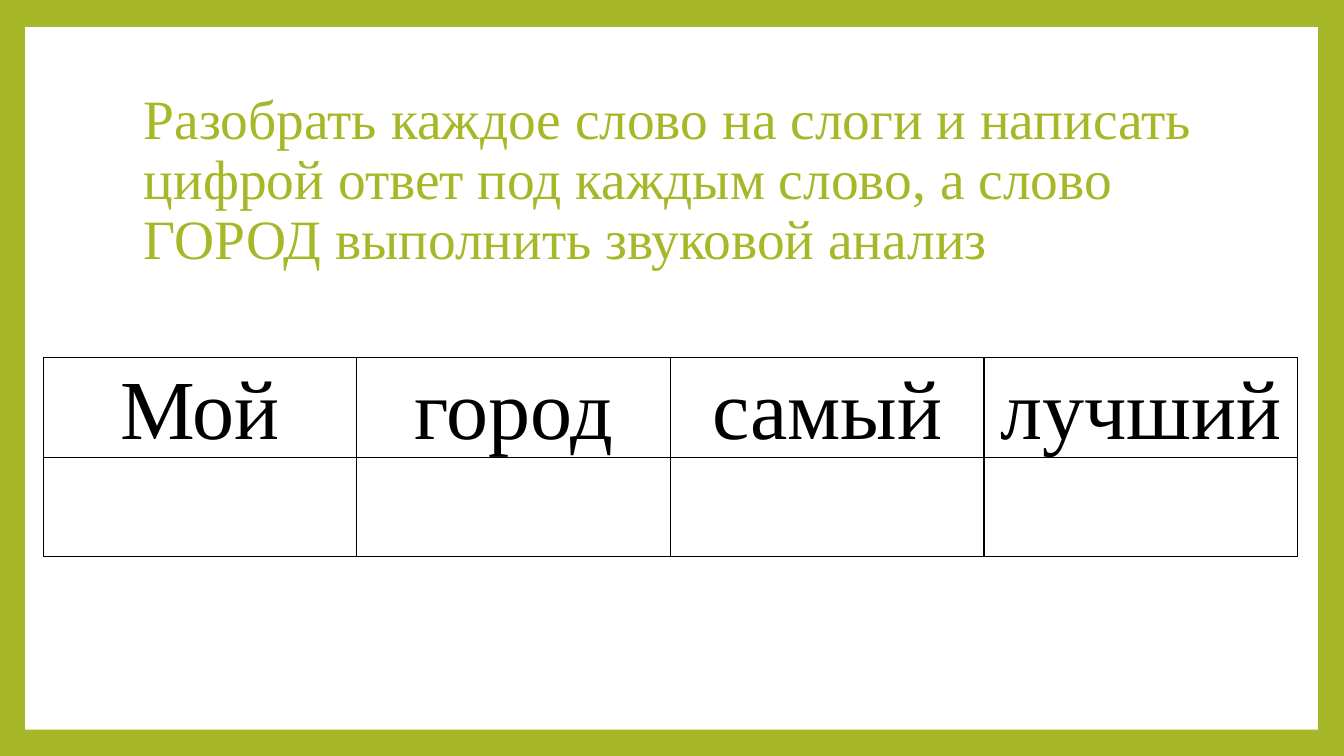
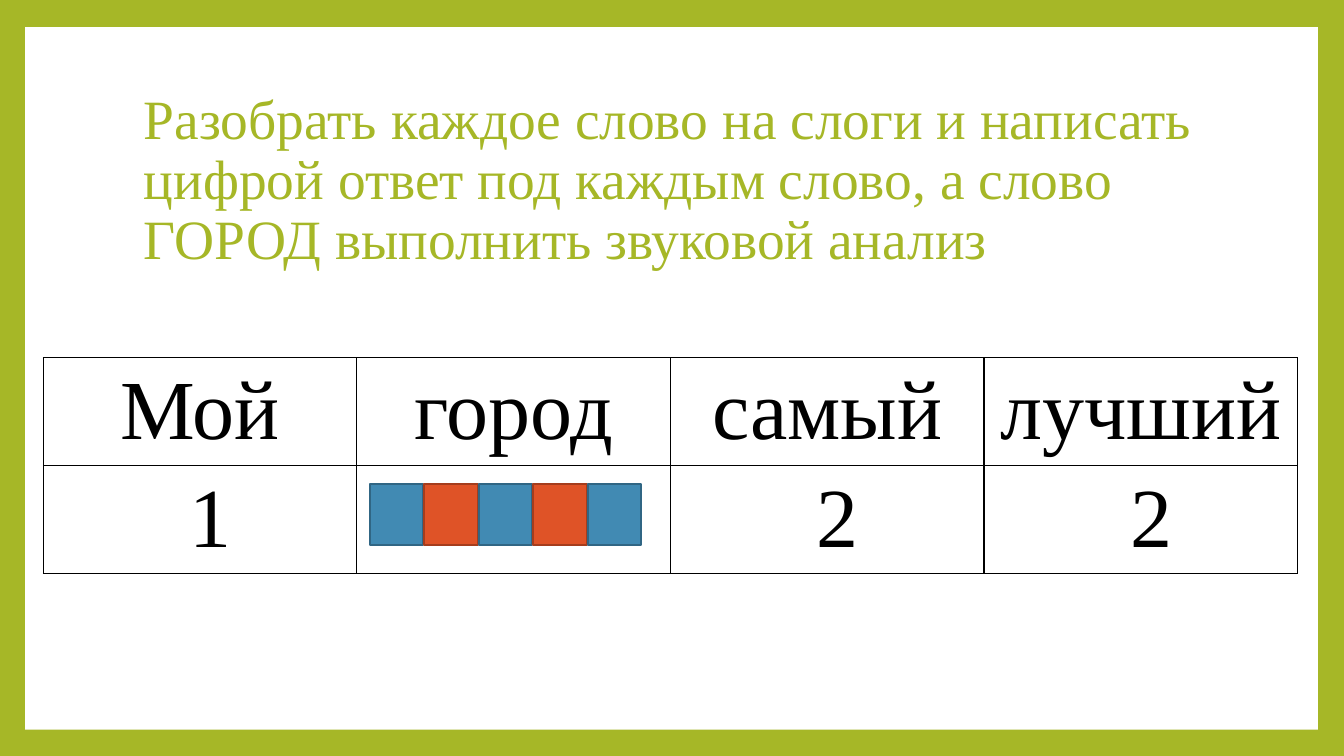
from dataclasses import dataclass

from lxml.etree import SubElement
from pptx import Presentation
from pptx.dml.color import RGBColor
from pptx.enum.shapes import MSO_SHAPE
from pptx.enum.text import MSO_ANCHOR, PP_ALIGN
from pptx.oxml.ns import qn
from pptx.slide import Slide
from pptx.table import _Cell
from pptx.text.text import _Paragraph
from pptx.util import Inches, Pt

FONT = "Times New Roman"
GREEN, WHITE, BLACK = "A6B727", "FFFFFF", "000000"
TITLE = (
    "Разобрать каждое слово на слоги и написать цифрой ответ "
    "под каждым слово, а слово ГОРОД выполнить звуковой анализ"
)
WORDS = ("Мой", "город", "самый", "лучший")
COLUMN_WIDTH, ROW_HEIGHT = 3.11, 0.98
CELL_MARGIN, ANSWER_INDENT = 0.07, 0.28
SOUND_LEFT, SOUND_TOP, SOUND_STEP = 3.67, 4.8, 0.54


@dataclass(frozen=True)
class Sound:
    fill: str
    line: str


CONSONANT = Sound("418AB3", "306684")
VOWEL = Sound("DF5327", "A53D1D")


@dataclass(frozen=True)
class Exercise:
    answers: tuple[str, ...]
    sounds: tuple[Sound, ...] = ()


EXERCISES = (
    Exercise(("", "", "", "")),
    Exercise(("1", "", "2", "2"), (CONSONANT, VOWEL, CONSONANT, VOWEL, CONSONANT)),
)


def color(value: str) -> RGBColor:
    return RGBColor.from_string(value)


def add_run(para: _Paragraph, text: str, size: float, ink: str) -> None:
    span = para.add_run()
    span.text = text
    span.font.name = FONT
    span.font.size = Pt(size)
    span.font.color.rgb = color(ink)


def add_rectangle(page: Slide, left: float, top: float, width: float, height: float,
                  fill: str, line: str | None = None) -> None:
    box = page.shapes.add_shape(
        MSO_SHAPE.RECTANGLE, Inches(left), Inches(top), Inches(width), Inches(height)
    )
    box.shadow.inherit = False
    box.fill.solid()
    box.fill.fore_color.rgb = color(fill)
    if line is None:
        box.line.fill.background()
    else:
        box.line.color.rgb = color(line)
        box.line.width = Pt(1.5)


def add_title(page: Slide) -> None:
    box = page.shapes.add_textbox(Inches(1.33), Inches(1.06), Inches(10.8), Inches(1.48))
    frame = box.text_frame
    frame.word_wrap = True
    frame.vertical_anchor = MSO_ANCHOR.MIDDLE
    para = frame.paragraphs[0]
    para.line_spacing = 0.9
    add_run(para, TITLE, 39.6, GREEN)


def outline_cell(cell: _Cell) -> None:
    cell.fill.background()
    properties = cell._tc.get_or_add_tcPr()
    for index, side in enumerate(("a:lnL", "a:lnR", "a:lnT", "a:lnB")):
        border = SubElement(properties, qn(side), w=str(Pt(1)))
        fill = SubElement(border, qn("a:solidFill"))
        SubElement(fill, qn("a:srgbClr"), val=BLACK)
        properties.insert(index, border)  # borders precede the fill


def add_word_table(page: Slide, answers: tuple[str, ...]) -> None:
    rows = (WORDS, answers)
    table = page.shapes.add_table(
        len(rows), len(WORDS), Inches(0.43), Inches(3.55),
        Inches(COLUMN_WIDTH * len(WORDS)), Inches(ROW_HEIGHT * len(rows)),
    ).table
    table.first_row = table.horz_banding = False
    for column in table.columns:
        column.width = Inches(COLUMN_WIDTH)
    for row_index, texts in enumerate(rows):
        table.rows[row_index].height = Inches(ROW_HEIGHT)
        for column_index, text in enumerate(texts):
            cell = table.cell(row_index, column_index)
            cell.margin_left = Inches(ANSWER_INDENT if row_index else CELL_MARGIN)
            cell.margin_right = Inches(CELL_MARGIN)
            cell.margin_top = cell.margin_bottom = 0
            outline_cell(cell)
            if text:
                para = cell.text_frame.paragraphs[0]
                para.alignment = PP_ALIGN.CENTER
                para.line_spacing = 1.07
                add_run(para, text, 60, BLACK)


def add_exercise(page: Slide, exercise: Exercise) -> None:
    add_rectangle(page, 0.25, 0.27, 12.82, 6.97, WHITE)
    add_word_table(page, exercise.answers)
    add_title(page)
    for index, sound in enumerate(exercise.sounds):
        left = SOUND_LEFT + index * SOUND_STEP
        add_rectangle(page, left, SOUND_TOP, 0.53, 0.61, sound.fill, sound.line)


def main() -> None:
    deck = Presentation()
    deck.slide_width, deck.slide_height = Inches(13.33), Inches(7.5)
    backdrop = deck.slide_master.background.fill
    backdrop.solid()
    backdrop.fore_color.rgb = color(GREEN)
    for exercise in EXERCISES:
        add_exercise(deck.slides.add_slide(deck.slide_layouts[6]), exercise)
    deck.save("out.pptx")


if __name__ == "__main__":
    main()
